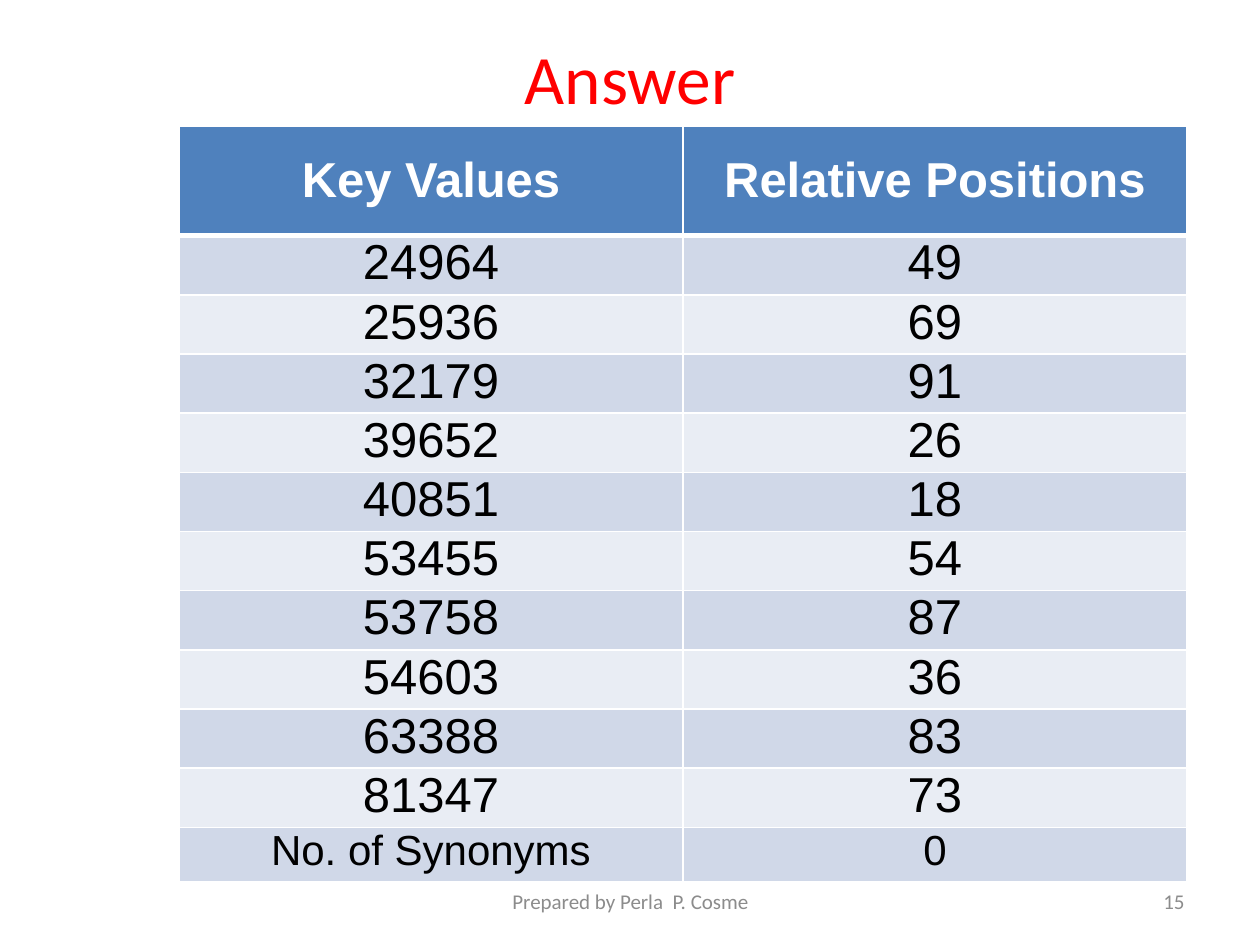
"""Build the answer slide: key values and their relative positions in a table."""
from dataclasses import dataclass

from lxml.etree import SubElement
from pptx import Presentation
from pptx.dml.color import RGBColor
from pptx.enum.text import MSO_ANCHOR, PP_ALIGN
from pptx.oxml.ns import qn
from pptx.slide import Slide
from pptx.table import _Cell
from pptx.text.text import TextFrame
from pptx.util import Inches, Pt

COLORS = {
    "title": "FF0000",
    "header": "4F81BD",
    "odd_row": "D0D8E8",
    "even_row": "E9EDF4",
    "white": "FFFFFF",
    "black": "000000",
    "footer": "8C8C8C",
}


@dataclass(frozen=True)
class Row:
    key: str
    position: str
    height: float = 0.47
    size: float = 28


@dataclass(frozen=True)
class Footer:
    text: str
    left: float
    width: float
    align: PP_ALIGN


ROWS = [
    Row("Key Values", "Relative Positions", height=0.87),
    Row("24964", "49"),
    Row("25936", "69"),
    Row("32179", "91"),
    Row("39652", "26"),
    Row("40851", "18"),
    Row("53455", "54"),
    Row("53758", "87"),
    Row("54603", "36"),
    Row("63388", "83"),
    Row("81347", "73"),
    Row("No. of Synonyms", "0", height=0.43, size=24),
]
FOOTERS = [
    Footer("Prepared by Perla  P. Cosme", 3.42, 3.17, PP_ALIGN.CENTER),
    Footer("15", 7.17, 2.33, PP_ALIGN.RIGHT),
]


def write(frame: TextFrame, text: str, *, size: float, color: str,
          font: str = "Calibri", bold: bool = False,
          align: PP_ALIGN = PP_ALIGN.CENTER) -> None:
    frame.word_wrap = True
    paragraph = frame.paragraphs[0]
    paragraph.alignment = align
    run = paragraph.add_run()
    run.text = text
    run.font.name = font
    run.font.size = Pt(size)
    run.font.bold = bold
    run.font.color.rgb = RGBColor.from_string(COLORS[color])


def add_borders(cell: _Cell, widths: dict[str, float]) -> None:
    properties = cell._tc.get_or_add_tcPr()
    for order, (side, width) in enumerate(widths.items()):
        border = SubElement(properties, qn(f"a:ln{side}"), w=str(Pt(width)))
        fill = SubElement(border, qn("a:solidFill"))
        SubElement(fill, qn("a:srgbClr"), val=COLORS["white"])
        properties.insert(order, border)


def format_cell(cell: _Cell, text: str, size: float, row_number: int) -> None:
    is_header = row_number == 0
    fill = "header" if is_header else "odd_row" if row_number % 2 else "even_row"
    cell.margin_left = cell.margin_right = Inches(0.07)
    cell.margin_top = cell.margin_bottom = 0
    cell.vertical_anchor = MSO_ANCHOR.MIDDLE if is_header else MSO_ANCHOR.TOP
    cell.fill.solid()
    cell.fill.fore_color.rgb = RGBColor.from_string(COLORS[fill])
    write(cell.text_frame, text, size=size, font="Arial", bold=is_header,
          color="white" if is_header else "black")
    add_borders(cell, {"L": 1, "R": 1, "T": 1, "B": 3} if is_header
                else {"L": 1, "R": 1, "B": 1})


def add_answers(slide: Slide) -> None:
    answers = slide.shapes.add_table(len(ROWS), 2, Inches(1.42), Inches(1),
                                     Inches(8), Inches(6)).table
    for number, row in enumerate(ROWS):
        answers.rows[number].height = Inches(row.height)
        for column, text in enumerate((row.key, row.position)):
            format_cell(answers.cell(number, column), text, row.size, number)


def add_title(slide: Slide) -> None:
    title = slide.shapes.title
    title.left, title.top = Inches(0.5), Inches(0.3)
    title.width, title.height = Inches(9), Inches(0.62)
    title.text_frame.vertical_anchor = MSO_ANCHOR.MIDDLE
    write(title.text_frame, "Answer", size=39.6, color="title")


def add_footer(slide: Slide, footer: Footer) -> None:
    frame = slide.shapes.add_textbox(Inches(footer.left), Inches(6.95),
                                     Inches(footer.width), Inches(0.4)).text_frame
    frame.vertical_anchor = MSO_ANCHOR.MIDDLE
    write(frame, footer.text, size=12, color="footer", align=footer.align)


def main() -> None:
    presentation = Presentation()
    presentation.slide_width, presentation.slide_height = Inches(10), Inches(7.5)
    slide = presentation.slides.add_slide(presentation.slide_layouts[5])
    add_title(slide)
    add_answers(slide)
    for footer in FOOTERS:
        add_footer(slide, footer)
    presentation.save("out.pptx")


if __name__ == "__main__":
    main()
